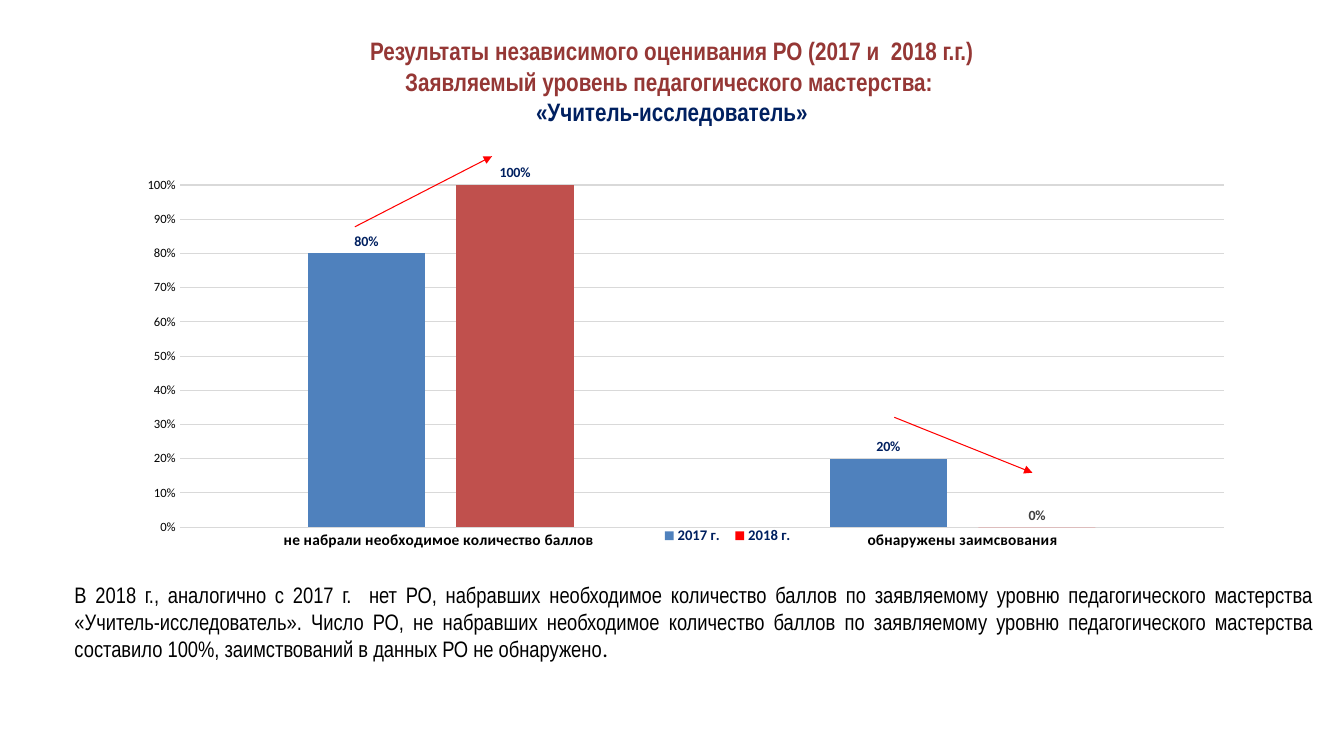
from lxml import etree
from pptx import Presentation
from pptx.chart.data import CategoryChartData
from pptx.dml.color import RGBColor
from pptx.enum import chart as kinds, shapes, text
from pptx.oxml import ns
from pptx.util import Inches, Pt

NAVY, BLACK, GREY, RED = "002060", "000000", "D9D9D9", "FF0000"
NARROW = "Arial Narrow"


def color(value):
    """Turn a hex string into a colour."""
    return RGBColor.from_string(value)


def style(font, size, value, bold=False, name="Calibri"):
    """Set the size, colour, weight and face of a font."""
    font.size, font.bold, font.name = Pt(size), bold, name
    font.color.rgb = color(value)


def fill(form, value):
    """Give a chart element a solid fill."""
    form.fill.solid()
    form.fill.fore_color.rgb = color(value)


def child(parent, tag, **attributes):
    """Append a namespaced XML element."""
    return etree.SubElement(parent, ns.qn(tag), attributes)


def add_text(page, area, lines, align, anchor):
    """Add a box with one paragraph of lines, each made of styled runs."""
    box = page.shapes.add_textbox(*map(Inches, area))
    frame = box.text_frame
    frame.word_wrap, frame.vertical_anchor = True, anchor
    para = frame.paragraphs[0]
    para.alignment = align
    for index, spans in enumerate(lines):
        if index:
            para.add_line_break()
        for words, size, value, bold, name in spans:
            span = para.add_run()
            span.text = words
            style(span.font, size, value, bold, name)


def add_arrow(page, start, end):
    """Add a thin red arrow."""
    ends = map(Inches, start + end)
    arrow = page.shapes.add_connector(shapes.MSO_CONNECTOR.STRAIGHT, *ends)
    arrow.line.color.rgb = color(RED)
    arrow.line.width = Pt(0.75)
    child(arrow.line._get_or_add_ln(), "a:tailEnd", type="triangle")
    child(arrow._element.spPr, "a:effectLst")


def place(part, layout, **settings):
    """Fix the position of a chart part by fractions of the chart."""
    for old in part.findall(ns.qn("c:layout")):
        part.remove(old)
    manual = child(layout, "c:manualLayout")
    for tag, value in settings.items():
        child(manual, "c:" + tag, val=str(value))


def style_axis(axis, size, bold=False):
    """Set the shared look of an axis."""
    axis.major_tick_mark = axis.minor_tick_mark = kinds.XL_TICK_MARK.NONE
    style(axis.tick_labels.font, size, BLACK, bold)


def grey_line(line):
    """Make a line thin and light grey."""
    line.color.rgb = color(GREY)
    line.width = Pt(0.75)


def style_series(series, value, label_color):
    """Colour a series and show its values above the bars."""
    fill(series.format, value)
    series.invert_if_negative = False
    labels = series.data_labels
    labels.show_value = True
    labels.number_format, labels.number_format_is_linked = "0%", False
    labels.position = kinds.XL_LABEL_POSITION.OUTSIDE_END
    style(labels.font, 10, label_color, True)


def add_columns(page):
    """Add the clustered column chart of both years."""
    data = CategoryChartData(number_format="0%")
    data.categories = ["не набрали необходимое количество баллов ", "обнаружены заимсвования"]
    data.add_series("2017 г.", [0.8, 0.2])
    data.add_series("2018 г.", [1, 0])
    area = map(Inches, (1.21, 1.39, 11.23, 4.09))
    chart = page.shapes.add_chart(kinds.XL_CHART_TYPE.COLUMN_CLUSTERED, *area, data).chart
    chart.has_title = False
    style(chart.font, 10, BLACK)

    plot = chart.plots[0]
    plot.gap_width, plot.overlap, plot.vary_by_categories = 219, -27, False
    before, after = plot.series
    style_series(before, "4F81BD", NAVY)
    style_series(after, RED, "404040")
    peak = after.points[0]
    fill(peak.format, "C0504D")
    style(peak.data_label.font, 10, NAVY, True)
    peak.data_label.position = kinds.XL_LABEL_POSITION.OUTSIDE_END

    style_axis(chart.category_axis, 11, True)
    grey_line(chart.category_axis.format.line)
    scale = chart.value_axis
    style_axis(scale, 9)
    scale.minimum_scale, scale.maximum_scale, scale.major_unit = 0, 1, 0.1
    scale.tick_labels.number_format = "0%"
    scale.tick_labels.number_format_is_linked = False
    scale.format.line.fill.background()
    grey_line(scale.major_gridlines.format.line)

    chart.has_legend = True
    legend = chart.legend
    legend.position = kinds.XL_LEGEND_POSITION.BOTTOM
    legend.include_in_layout = False
    style(legend.font, 10.5, NAVY, True)

    key = legend._element
    layout = etree.Element(ns.qn("c:layout"))
    place(key, layout, xMode="edge", yMode="edge", x=0.47, y=0.93, w=0.13, h=0.06)
    key.find(ns.qn("c:legendPos")).addnext(layout)
    field = chart._chartSpace.chart.plotArea
    layout = etree.Element(ns.qn("c:layout"))
    place(field, layout, layoutTarget="inner", xMode="edge", yMode="edge",
          x=0.051, y=0.109, w=0.922, h=0.83)
    field.insert(0, layout)


def main():
    """Build the slide and save it."""
    deck = Presentation()
    deck.slide_width, deck.slide_height = Inches(13.33), Inches(7.5)
    page = deck.slides.add_slide(deck.slide_layouts[6])
    heading = (18, "953735", True, NARROW)
    add_text(page, (0, 0.3, 13.33, 1.01), [
        [("Результаты независимого оценивания РО (2017 и  2018 г.г.)", *heading)],
        [("Заявляемый уровень педагогического мастерства: ", *heading)],
        [("«Учитель-исследователь»", 18, NAVY, True, NARROW)],
    ], text.PP_ALIGN.CENTER, text.MSO_ANCHOR.MIDDLE)
    add_columns(page)
    summary = (
        "В 2018 г., аналогично с 2017 г.  нет РО, набравших необходимое количество баллов "
        "по заявляемому уровню педагогического мастерства «Учитель-исследователь». "
        "Число РО, не набравших необходимое количество баллов по заявляемому уровню "
        "педагогического мастерства составило 100%, заимствований в данных РО не обнаружено"
    )
    add_text(page, (0.64, 5.72, 12.49, 0.91), [
        [(summary, 16, BLACK, False, NARROW), (". ", 16, BLACK, False, "Calibri")],
    ], text.PP_ALIGN.JUSTIFY, text.MSO_ANCHOR.TOP)
    add_arrow(page, (3.52, 2.25), (4.88, 1.55))
    add_arrow(page, (8.87, 4.14), (10.24, 4.69))
    deck.save("out.pptx")


if __name__ == "__main__":
    main()
